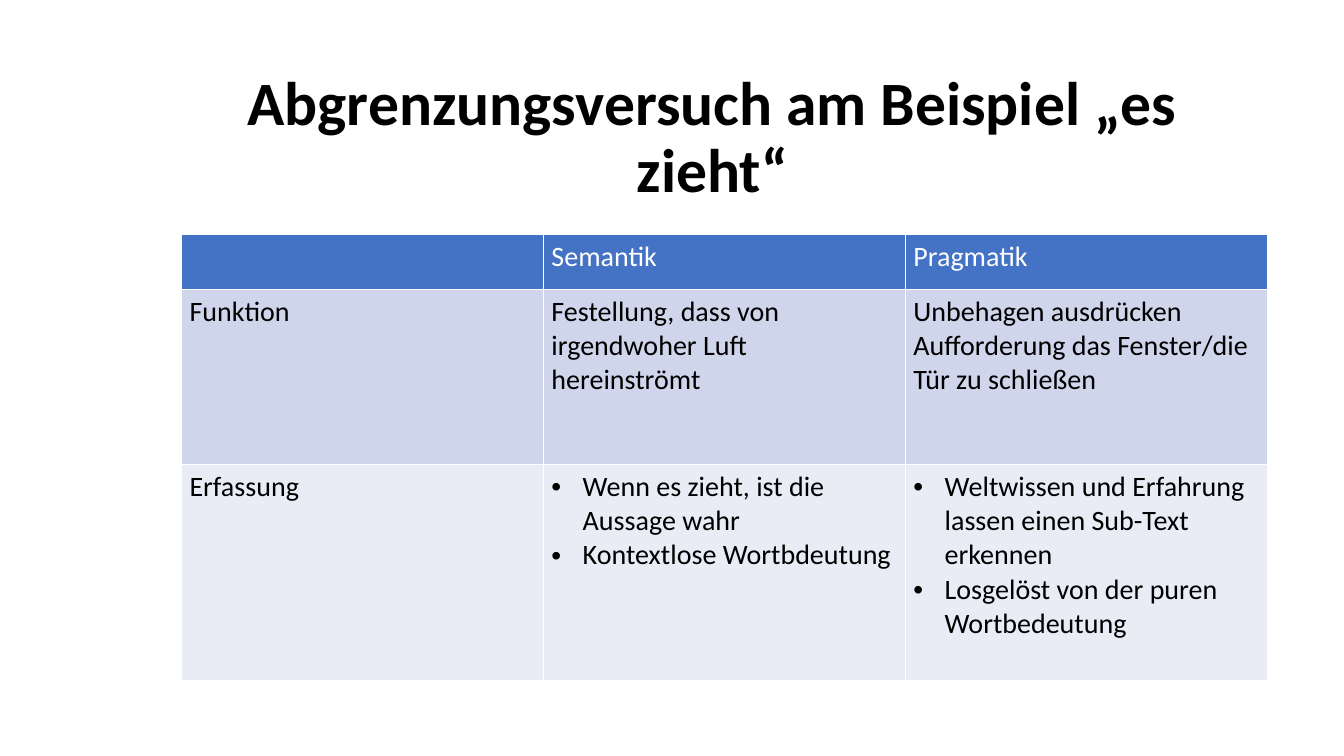
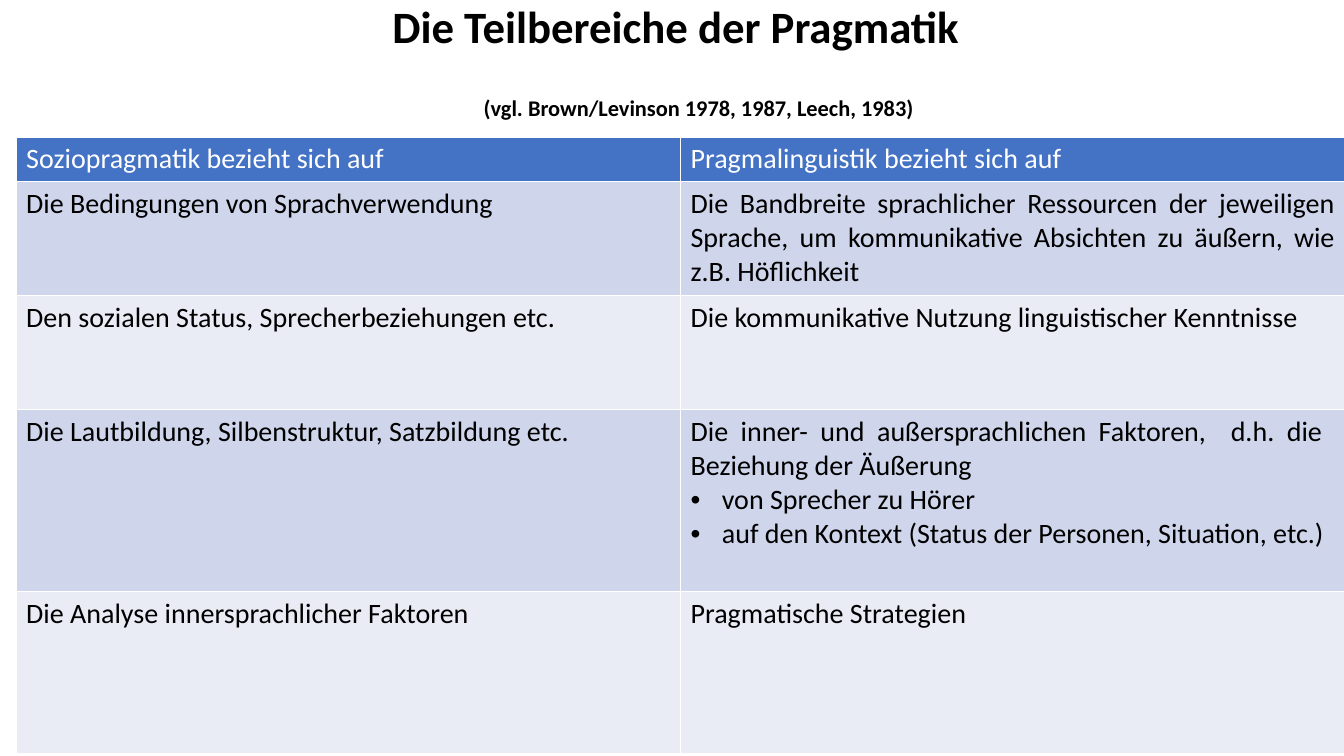
"""Build two slides that compare semantics and pragmatics in tables."""
from lxml import etree
from pptx import Presentation
from pptx.dml.color import RGBColor
from pptx.enum.text import MSO_ANCHOR, MSO_AUTO_SIZE, PP_ALIGN
from pptx.oxml.ns import qn
from pptx.util import Inches, Pt

LEFT, CENTER, JUSTIFY = PP_ALIGN.LEFT, PP_ALIGN.CENTER, PP_ALIGN.JUSTIFY
TITLE_LAYOUT = 5
FONT = "Calibri"
BULLET = "• "
COLORS = {"header": "4472C4", "odd": "CFD5EA", "even": "E9EBF5",
          "white": "FFFFFF", "black": "000000"}

SLIDES = [
    {
        "title": [("Abgrenzungsversuch am Beispiel „es zieht“", {"size": 44})],
        "title_box": (1.56, 0.68, 11.02, 1.4),
        "table_position": (1.8, 2.33),
        "column_width": 3.59,
        "row_heights": [0.54, 1.74, 2.14],
        "side_margin": 0.08,
        "align": LEFT,
        "rows": [
            [[], ["Semantik"], ["Pragmatik"]],
            [["Funktion"],
             ["Festellung, dass von irgendwoher Luft hereinströmt"],
             ["Unbehagen ausdrücken", "Aufforderung das Fenster/die Tür zu schließen"]],
            [["Erfassung"],
             ["• Wenn es zieht, ist die Aussage wahr", "• Kontextlose Wortbdeutung"],
             ["• Weltwissen und Erfahrung lassen einen Sub-Text erkennen",
              "• Losgelöst von der puren Wortbedeutung"]],
        ],
    },
    {
        "title": [("Die Teilbereiche der Pragmatik", {"size": 32, "space_after": 32}),
                  ("(vgl. Brown/Levinson 1978, 1987, Leech, 1983)", {"size": 16, "indent": 0.45})],
        "title_box": (2.04, 0, 9.33, 1.25),
        "table_position": (0.16, 1.36),
        "column_width": 6.59,
        "row_heights": [0.44, 1.13, 1.13, 1.81, 1.61],
        "side_margin": 0.1,
        "align": JUSTIFY,
        "rows": [
            [["Soziopragmatik bezieht sich auf"], ["Pragmalinguistik bezieht sich auf"]],
            [["Die Bedingungen von Sprachverwendung"],
             ["Die Bandbreite sprachlicher Ressourcen der jeweiligen Sprache, um "
              "kommunikative Absichten zu äußern, wie z.B. Höflichkeit"]],
            [["Den sozialen Status, Sprecherbeziehungen etc."],
             ["Die kommunikative Nutzung linguistischer Kenntnisse"]],
            [["Die Lautbildung, Silbenstruktur, Satzbildung etc."],
             ["Die inner- und außersprachlichen Faktoren,  d.h. die  Beziehung der Äußerung",
              "• von Sprecher zu Hörer",
              "• auf den Kontext (Status der Personen, Situation, etc.)"]],
            [["Die Analyse innersprachlicher Faktoren"], ["Pragmatische Strategien"]],
        ],
    },
]


def write_paragraph(frame, index, text, size=20, color="black", bold=False,
                    align=LEFT, line_spacing=1.0, space_after=0, indent=0):
    """Write one formatted paragraph; a leading bullet becomes a real one."""
    paragraph = frame.add_paragraph() if index else frame.paragraphs[0]
    paragraph.alignment = align
    paragraph.line_spacing = line_spacing
    paragraph.space_before = Pt(0)
    paragraph.space_after = Pt(space_after)
    properties = paragraph._p.get_or_add_pPr()
    if text.startswith(BULLET):
        indent = 0.31
        properties.set("indent", str(-Inches(indent)))
        etree.SubElement(properties, qn("a:buFont"), typeface="Arial")
        etree.SubElement(properties, qn("a:buChar"), char=BULLET.strip())
    properties.set("marL", str(Inches(indent)))
    run = paragraph.add_run()
    run.text = text.removeprefix(BULLET)
    run.font.name = FONT
    run.font.size = Pt(size)
    run.font.bold = bold
    run.font.color.rgb = RGBColor.from_string(COLORS[color])


def style_cell(cell, fill, side_margin):
    """Give a cell its margins, thin white borders and fill."""
    cell.margin_left = cell.margin_right = Inches(side_margin)
    cell.margin_top = cell.margin_bottom = Inches(0.05)
    properties = cell._tc.get_or_add_tcPr()
    for side in ("lnL", "lnR", "lnT", "lnB"):
        line = etree.SubElement(properties, qn(f"a:{side}"), w=str(Pt(1)))
        solid = etree.SubElement(line, qn("a:solidFill"))
        etree.SubElement(solid, qn("a:srgbClr"), val=COLORS["white"])
    cell.fill.solid()
    cell.fill.fore_color.rgb = RGBColor.from_string(COLORS[fill])


presentation = Presentation()
presentation.slide_width = Inches(13.33)
presentation.slide_height = Inches(7.5)

for content in SLIDES:
    slide = presentation.slides.add_slide(presentation.slide_layouts[TITLE_LAYOUT])
    title = slide.shapes.title
    title.left, title.top, title.width, title.height = map(Inches, content["title_box"])
    title.text_frame.auto_size = MSO_AUTO_SIZE.NONE
    title.text_frame.word_wrap = True
    title.text_frame.vertical_anchor = MSO_ANCHOR.MIDDLE
    for index, (text, text_format) in enumerate(content["title"]):
        write_paragraph(title.text_frame, index, text, bold=True, align=CENTER,
                        line_spacing=0.9, **text_format)

    rows, heights = content["rows"], content["row_heights"]
    column_count = len(rows[0])
    left, top = map(Inches, content["table_position"])
    table = slide.shapes.add_table(
        len(rows), column_count, left, top,
        Inches(content["column_width"] * column_count), Inches(sum(heights))).table
    for column in table.columns:
        column.width = Inches(content["column_width"])
    for row_index, (row, height) in enumerate(zip(rows, heights)):
        table.rows[row_index].height = Inches(height)
        is_header = row_index == 0
        fill = "header" if is_header else "odd" if row_index % 2 else "even"
        for column_index, texts in enumerate(row):
            cell = table.cell(row_index, column_index)
            style_cell(cell, fill, content["side_margin"])
            for index, text in enumerate(texts):
                write_paragraph(cell.text_frame, index, text,
                                color="white" if is_header else "black",
                                align=LEFT if is_header else content["align"])

presentation.save("out.pptx")
